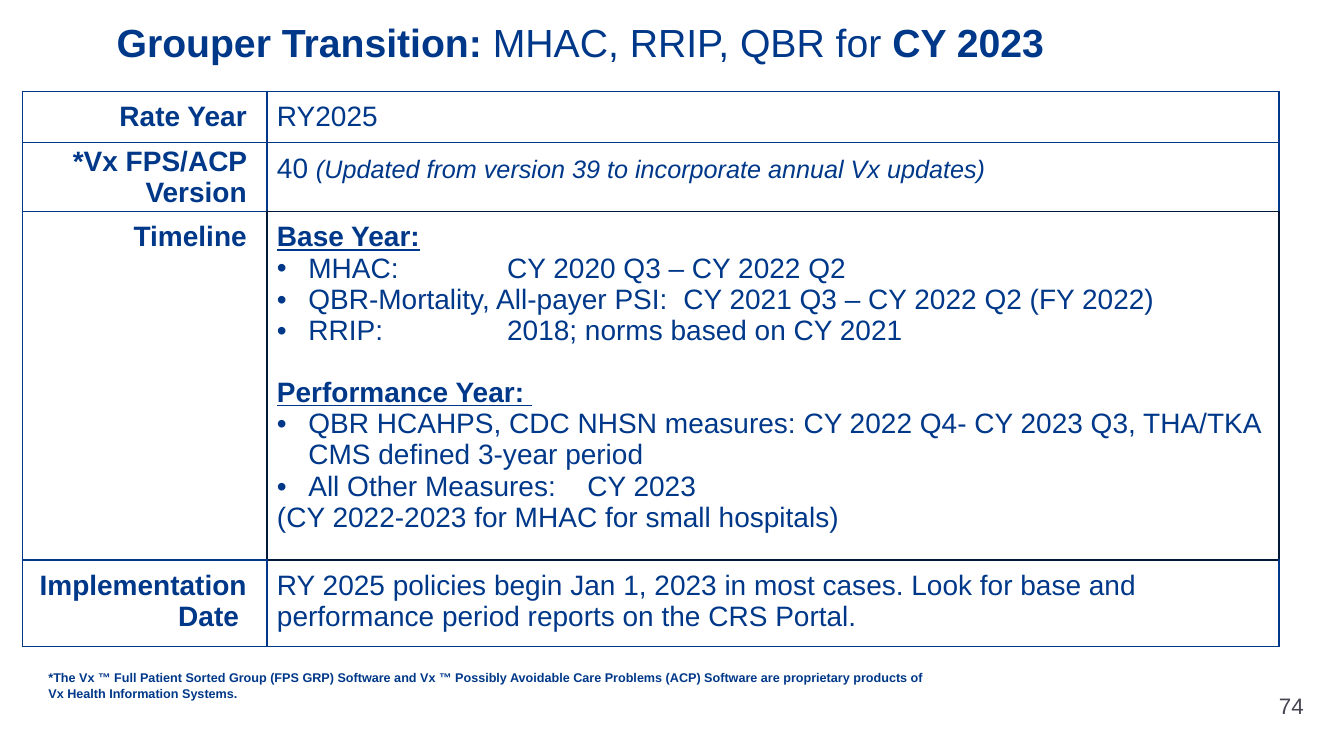
import pptx
import pptx.util
import pptx.dml.color
import pptx.enum.text
import pptx.oxml
import pptx.oxml.ns
from lxml import etree

Cm, Pt = pptx.util.Cm, pptx.util.Pt
ALIGN = pptx.enum.text.PP_ALIGN
MID = pptx.enum.text.MSO_ANCHOR.MIDDLE
TOP = pptx.enum.text.MSO_ANCHOR.TOP

THEME = {
    "font": "Arial", "blue": "003889", "dark": "001938", "grey": "464653",
    "title": 28, "body": 20, "aside": 18, "page": 16, "note": 9, "line": 1,
}

# A paragraph is a list of (text, style) runs; style letters: b, i, u, s (aside size)
TITLE = [("Grouper Transition: ", "b"), ("MHAC, RRIP, QBR for ", ""), ("CY 2023", "b")]
LABELS = ["Rate Year", "*Vx FPS/ACP Version", "Timeline", "Implementation Date "]
YEAR = [{"runs": [("RY2025", "")]}]
VERSION = [{"runs": [
    ("40 ", ""),
    ("(Updated from version 39 to incorporate annual Vx updates)", "is")]}]
# "tab" is the tab stop in cm from the left of the text
TIMELINE = [
    {"runs": [("Base Year:", "bu")]},
    {"runs": [("MHAC:\tCY 2020 Q3 – CY 2022 Q2", "")], "tab": 5.8},
    {"runs": [("QBR-Mortality, All-payer PSI:\tCY 2021 Q3 – CY 2022 Q2 (FY 2022)", "")],
     "tab": 10.24},
    {"runs": [("RRIP:\t2018; norms based on CY 2021", "")], "tab": 5.8},
    {"runs": [("Performance Year: ", "bu")], "before": 22},
    {"runs": [("QBR HCAHPS, CDC NHSN measures: CY 2022 Q4- CY 2023 Q3, THA/TKA "
               "CMS defined 3-year period", "")], "tab": 5.8},
    {"runs": [("All Other Measures:\tCY 2023", "")], "tab": 7.82},
    {"runs": [("(CY 2022-2023 for MHAC for small hospitals)", "")]},
]
START = [{"runs": [("RY 2025 policies begin Jan 1, 2023 in most cases. Look for base and "
                    "performance period reports on the CRS Portal.", "")]}]
BODIES = [YEAR, VERSION, TIMELINE, START]
NOTE = ("*The Vx ™ Full Patient Sorted Group (FPS GRP) Software and Vx ™ Possibly "
        "Avoidable Care Problems (ACP) Software are proprietary products of "
        "Vx Health Information Systems.")
PAGE = "74"

COLS = [6.17, 25.5]
ROWS = [1.3, 1.73, 8.25, 2.18]
INDENT = 0.79
DARK = (2, 1)  # the timeline cell has dark edges


def paint(font, size, color="blue", style=""):
    font.name = THEME["font"]
    font.size = Pt(THEME["aside"] if "s" in style else THEME[size])
    font.color.rgb = pptx.dml.color.RGBColor.from_string(THEME[color])
    font.bold = "b" in style
    font.italic = "i" in style
    font.underline = "u" in style


def write(para, runs, size, color="blue"):
    for text, style in runs:
        run = para.add_run()
        run.text = text
        paint(run.font, size, color, style)


def bullet(para, tab):
    props = para._p.get_or_add_pPr()
    props.set("marL", str(Cm(INDENT)))
    props.set("indent", str(-Cm(INDENT)))
    ns = pptx.oxml.ns.qn
    tint = etree.SubElement(props, ns("a:buClr"))
    etree.SubElement(tint, ns("a:srgbClr"), val=THEME["blue"])
    etree.SubElement(props, ns("a:buFont"), typeface=THEME["font"])
    etree.SubElement(props, ns("a:buChar"), char="•")
    stops = etree.SubElement(props, ns("a:tabLst"))
    etree.SubElement(stops, ns("a:tab"), pos=str(Cm(tab)), algn="l")


def edge(cell, row, col):
    """Draw the four borders; edges shared with the dark cell are dark."""
    props = cell._tc.get_or_add_tcPr()
    ns = pptx.oxml.ns.qn
    sides = {"L": (0, -1), "R": (0, 1), "T": (-1, 0), "B": (1, 0)}
    for spot, (side, (down, over)) in enumerate(sides.items()):
        near = DARK in ((row, col), (row + down, col + over))
        line = etree.Element(ns("a:ln" + side), w=str(Pt(THEME["line"])))
        fill = etree.SubElement(line, ns("a:solidFill"))
        etree.SubElement(fill, ns("a:srgbClr"), val=THEME["dark" if near else "blue"])
        props.insert(spot, line)


def label(cell, text, tight):
    cell.margin_left = Cm(0.15 if tight else 0.25)
    cell.margin_right = Cm(0.51)
    cell.margin_top = Cm(0 if tight else 0.25)
    cell.margin_bottom = Cm(0 if tight else 0.13)
    cell.vertical_anchor = MID if tight else TOP
    para = cell.text_frame.paragraphs[0]
    para.alignment = ALIGN.RIGHT
    write(para, [(text, "b")], "body")


def body(cell, items):
    cell.margin_left = cell.margin_right = cell.margin_top = Cm(0.25)
    cell.margin_bottom = Cm(0.13)
    frame = cell.text_frame
    for spot, item in enumerate(items):
        para = frame.add_paragraph() if spot else frame.paragraphs[0]
        if "before" in item:
            para.space_before = Pt(item["before"])
        if "tab" in item:
            bullet(para, item["tab"])
        write(para, item["runs"], "body")


def box(slide, place, runs, size, color="blue", pad=0.13, anchor=TOP):
    frame = slide.shapes.add_textbox(*map(Cm, place)).text_frame
    frame.word_wrap = True
    frame.vertical_anchor = anchor
    frame.margin_left = frame.margin_right = Cm(0.25)
    frame.margin_top = frame.margin_bottom = Cm(pad)
    write(frame.paragraphs[0], runs, size, color)


def main():
    deck = pptx.Presentation()
    deck.slide_width, deck.slide_height = Cm(33.87), Cm(19.05)
    slide = deck.slides.add_slide(deck.slide_layouts[6])

    box(slide, (2.69, 0.33, 29.21, 1.68), TITLE, "title")
    place = map(Cm, (0.56, 2.3, sum(COLS), sum(ROWS)))
    table = slide.shapes.add_table(len(ROWS), len(COLS), *place).table
    table.first_row = table.horz_banding = False
    for col, width in enumerate(COLS):
        table.columns[col].width = Cm(width)
    for row, height in enumerate(ROWS):
        table.rows[row].height = Cm(height)
        label(table.cell(row, 0), LABELS[row], row == 1)
        body(table.cell(row, 1), BODIES[row])
        for col in range(len(COLS)):
            cell = table.cell(row, col)
            cell.fill.background()
            edge(cell, row, col)

    box(slide, (0.97, 16.64, 22.81, 1.27), [(NOTE, "b")], "note", pad=0.25)
    box(slide, (31.98, 17.27, 1.6, 1.02), [(PAGE, "")], "page", "grey", anchor=MID)
    deck.save("out.pptx")


if __name__ == "__main__":
    main()
